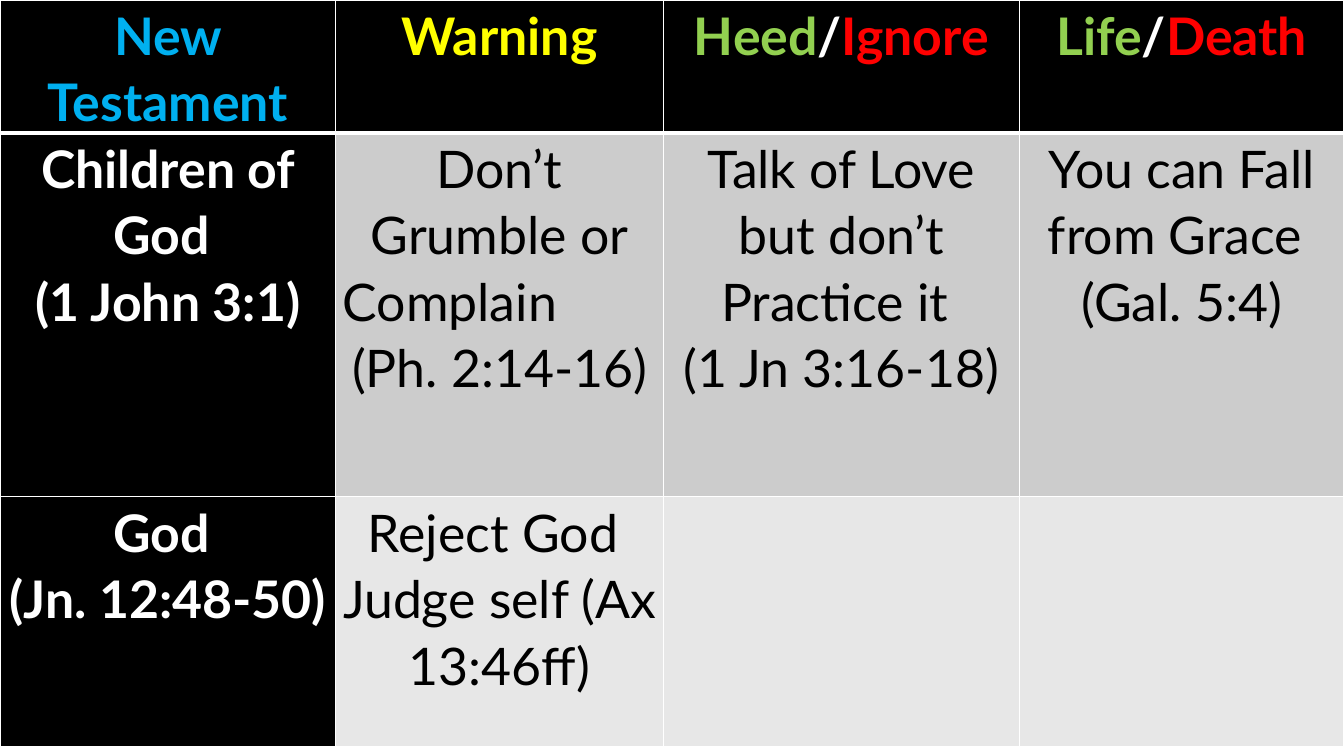
"""Build the New Testament warnings table slide."""
from dataclasses import dataclass

from lxml.etree import SubElement
from pptx import Presentation
from pptx.dml.color import RGBColor as Color
from pptx.enum.text import PP_ALIGN as Align
from pptx.oxml.ns import qn
from pptx.util import Inches, Pt

HEADER = [
    [[("New Testament", "blue")]],
    [[("Warning", "yellow")]],
    [[("Heed", "green"), ("/", "white"), ("Ignore", "red")]],
    [[("Life", "green"), ("/", "white"), ("Death", "red")]],
]
BODY = [
    [
        ["Children of God ", "(1 John 3:1)"],
        ["Don’t Grumble or", "Complain", "(Ph. 2:14-16)"],
        ["Talk of Love but don’t Practice it ", "(1 Jn 3:16-18)"],
        ["You can Fall from Grace ", "(Gal. 5:4)"],
    ],
    [
        ["God ", "(Jn. 12:48-50)"],
        ["Reject God ", "Judge self (Ax 13:46ff)"],
        [],
        [],
    ],
]
LEFT_ALIGNED = {"Complain"}
COLUMN_WIDTHS = [3.33, 3.25, 3.53, 3.22]
ROW_HEIGHTS = [1.23, 3.61, 2.48]
SLIDE_SIZE = (13.33, 7.5)


@dataclass(frozen=True)
class Theme:
    """Colours, type and line sizes of the slide."""
    font: str = "Lato"
    size: float = 37
    line_spacing: float = 1.07
    side_margin: float = 0.07
    thin: float = 1
    thick: float = 3
    blue: str = "00B0F0"
    yellow: str = "FFFF00"
    green: str = "92D050"
    red: str = "FF0000"
    white: str = "FFFFFF"
    black: str = "000000"
    bands: tuple = ("CCCCCC", "E7E7E7")


THEME = Theme()


def set_borders(cell, row):
    """Draw white cell edges, thick below the header row."""
    properties = cell._tc.get_or_add_tcPr()
    thick_edge = {0: "lnB", 1: "lnT"}.get(row)
    for edge in ("lnL", "lnR", "lnT", "lnB"):
        width = THEME.thick if edge == thick_edge else THEME.thin
        line = SubElement(properties, qn(f"a:{edge}"), w=str(Pt(width)))
        fill = SubElement(line, qn("a:solidFill"))
        SubElement(fill, qn("a:srgbClr"), val=THEME.white)


def write_paragraph(paragraph, runs, bold):
    """Fill one paragraph with coloured runs."""
    text = "".join(words for words, _ in runs)
    paragraph.alignment = Align.LEFT if text in LEFT_ALIGNED else Align.CENTER
    paragraph.line_spacing = THEME.line_spacing
    for words, color in runs:
        run = paragraph.add_run()
        run.text = words
        style = {"name": THEME.font, "size": Pt(THEME.size), "bold": bold}
        for name, value in style.items():
            setattr(run.font, name, value)
        run.font.color.rgb = Color.from_string(getattr(THEME, color))


def fill_cell(cell, row, column, paragraphs):
    """Format one cell and write its paragraphs."""
    is_heading = row == 0 or column == 0
    side = Inches(THEME.side_margin)
    margins = {"margin_left": side, "margin_right": side,
               "margin_top": 0, "margin_bottom": 0}
    for name, value in margins.items():
        setattr(cell, name, value)
    set_borders(cell, row)
    cell.fill.solid()
    background = THEME.black if is_heading else THEME.bands[row - 1]
    cell.fill.fore_color.rgb = Color.from_string(background)
    frame = cell.text_frame
    for index, runs in enumerate(paragraphs):
        paragraph = frame.add_paragraph() if index else frame.paragraphs[0]
        write_paragraph(paragraph, runs, is_heading)


def color_body(cells):
    """Give body text white in the first column and black elsewhere."""
    return [[[(text, "black" if column else "white")] for text in lines]
            for column, lines in enumerate(cells)]


def main():
    """Create and save the presentation."""
    presentation = Presentation()
    presentation.slide_width, presentation.slide_height = map(Inches, SLIDE_SIZE)
    slide = presentation.slides.add_slide(presentation.slide_layouts[6])
    rows = [HEADER, *map(color_body, BODY)]
    table = slide.shapes.add_table(
        len(rows), len(HEADER), 0, 0,
        Inches(sum(COLUMN_WIDTHS)), Inches(sum(ROW_HEIGHTS))).table
    for column, width in zip(table.columns, COLUMN_WIDTHS):
        column.width = Inches(width)
    for row, height in zip(table.rows, ROW_HEIGHTS):
        row.height = Inches(height)
    for row, cells in enumerate(rows):
        for column, paragraphs in enumerate(cells):
            fill_cell(table.cell(row, column), row, column, paragraphs)
    presentation.save("out.pptx")


if __name__ == "__main__":
    main()
